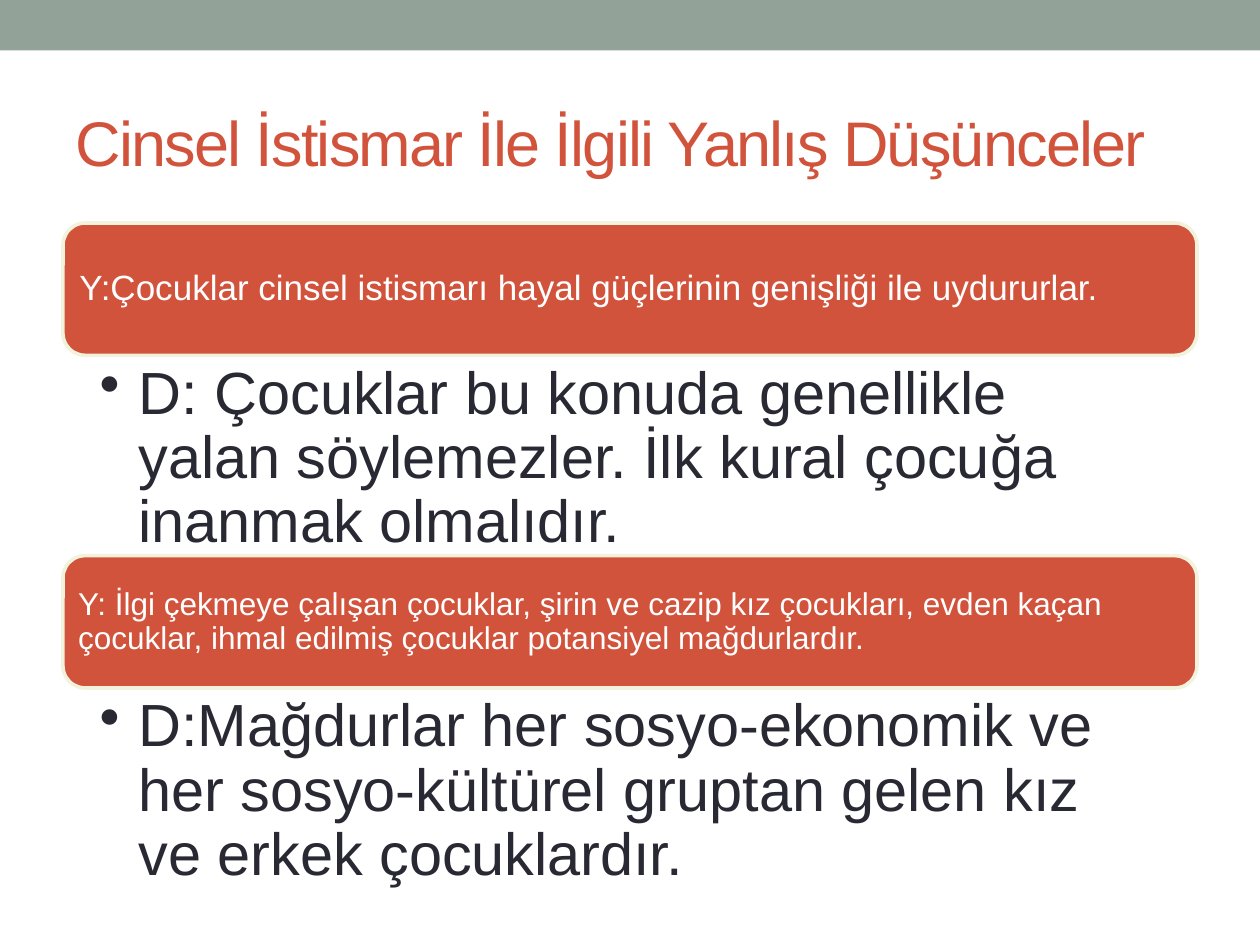
import pptx
import pptx.util
import pptx.dml.color
import pptx.enum.shapes
import pptx.enum.text
from dataclasses import dataclass
from lxml import etree

Inches, Pt = pptx.util.Inches, pptx.util.Pt
RGB = pptx.dml.color.RGBColor.from_string
SHAPE = pptx.enum.shapes.MSO_SHAPE
ANCHOR = pptx.enum.text.MSO_ANCHOR


@dataclass(frozen=True)
class Theme:
    font: str = "Arial"
    band: str = "93A299"
    accent: str = "D2533C"
    outline: str = "F3F2DC"
    ink: str = "292934"
    light: str = "FFFFFF"
    title: int = 36
    answer: int = 34


T = Theme()


def add_box(s, kind, left, top, width, height, fill, line=None):
    sp = s.shapes.add_shape(kind, Inches(left), Inches(top), Inches(width), Inches(height))
    sp.shadow.inherit = False
    sp.fill.solid()
    sp.fill.fore_color.rgb = RGB(fill)
    if line:
        sp.line.color.rgb = RGB(line)
        sp.line.width = Pt(2.08)
    else:
        sp.line.fill.background()


def add_text(s, left, top, width, height, text, size, color, anchor, insets, spacing=0.9):
    sp = s.shapes.add_textbox(Inches(left), Inches(top), Inches(width), Inches(height))
    tf = sp.text_frame
    tf.word_wrap = True
    tf.vertical_anchor = anchor
    tf.margin_left, tf.margin_top, tf.margin_right, tf.margin_bottom = map(Inches, insets)
    p = tf.paragraphs[0]
    p.line_spacing = spacing
    r = p.add_run()
    r.text = text
    r.font.name = T.font
    r.font.size = Pt(size)
    r.font.color.rgb = RGB(color)
    return p, r


prs = pptx.Presentation()
prs.slide_width, prs.slide_height = Inches(10), Inches(7.5)
s = prs.slides.add_slide(prs.slide_layouts[6])

# Top band
add_box(s, SHAPE.RECTANGLE, 0, 0, 10, 0.4, T.band)

# Title
p, r = add_text(s, 0.5, 0.58, 9, 1.08, "Cinsel İstismar İle İlgili Yanlış Düşünceler",
                T.title, T.accent, ANCHOR.MIDDLE, (0.1, 0.05, 0.1, 0.05), 1.0)
r.font._element.set("spc", "-100")

# Each myth in a rounded bar, with the fact below it
pairs = [
    ("Y:Çocuklar cinsel istismarı hayal güçlerinin genişliği ile uydururlar.", 20, 0.08,
     "D: Çocuklar bu konuda genellikle yalan söylemezler. İlk kural çocuğa inanmak olmalıdır."),
    ("Y: İlgi çekmeye çalışan çocuklar, şirin ve cazip kız çocukları, evden kaçan çocuklar, "
     "ihmal edilmiş çocuklar potansiyel mağdurlardır.", 18, 0.07,
     "D:Mağdurlar her sosyo-ekonomik ve her sosyo-kültürel gruptan gelen kız ve erkek çocuklardır."),
]
bar_h, fact_h = 1.05, 1.59
for i, (myth, size, inset, fact) in enumerate(pairs):
    top = 1.77 + i * (bar_h + fact_h)
    add_box(s, SHAPE.ROUNDED_RECTANGLE, 0.5, top, 9, bar_h, T.accent, T.outline)
    add_text(s, 0.55, top + 0.05, 8.9, bar_h - 0.1, myth, size, T.light,
             ANCHOR.MIDDLE, (inset,) * 4)
    p, r = add_text(s, 0.5, top + bar_h, 9, fact_h, fact, T.answer, T.ink,
                    ANCHOR.TOP, (0.29, 0.06, 0.34, 0.06))

    # Hanging bullet
    pPr = p._p.get_or_add_pPr()
    pPr.set("marL", str(Inches(0.31)))
    pPr.set("indent", str(Inches(-0.31)))
    bullet = etree.SubElement(pPr, pptx.oxml.ns.qn("a:buChar"))
    bullet.set("char", "•")

prs.save("out.pptx")
